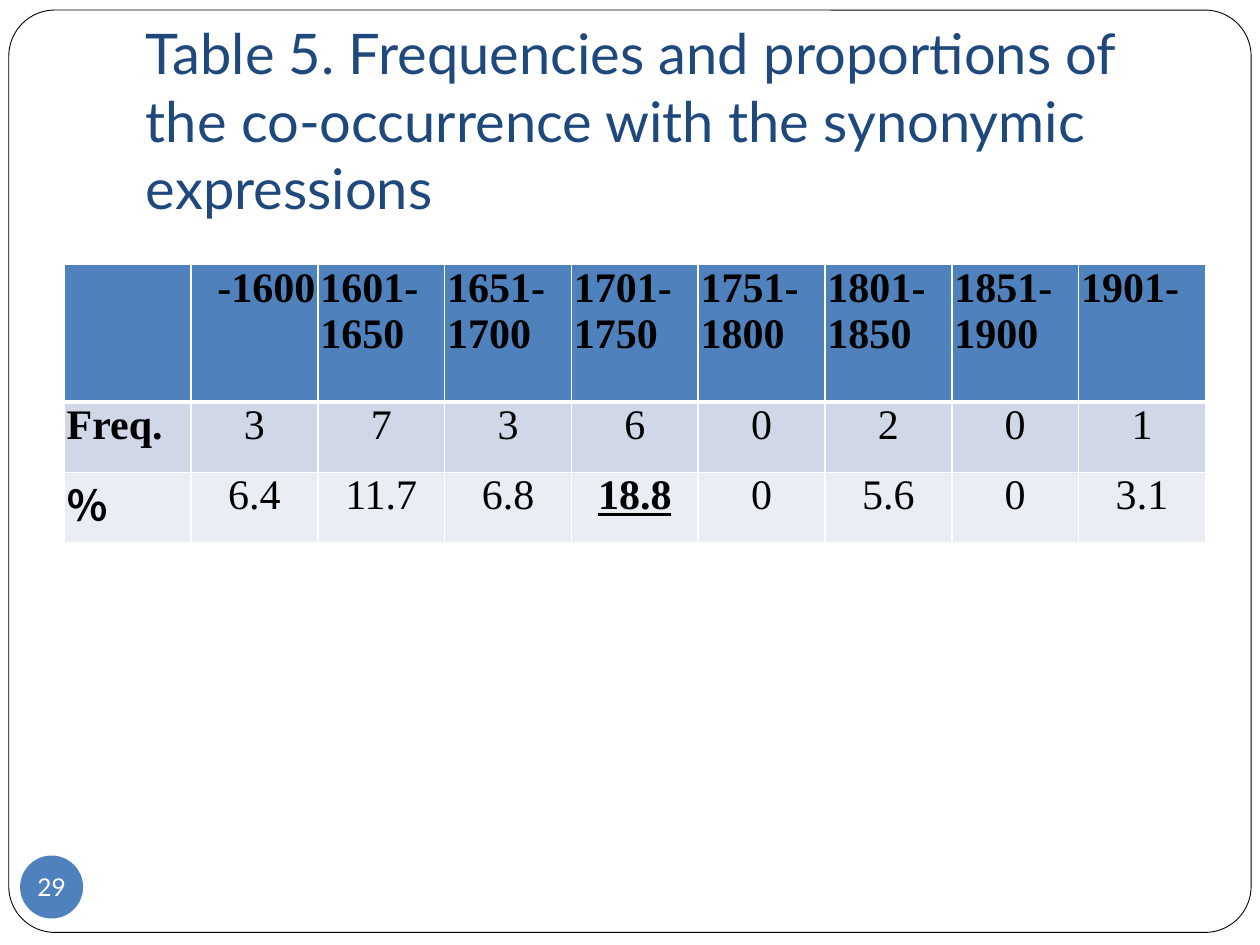
from dataclasses import dataclass

from lxml.etree import SubElement
from pptx import Presentation
from pptx.dml.color import RGBColor
from pptx.enum.shapes import MSO_SHAPE
from pptx.enum.text import MSO_ANCHOR, PP_ALIGN
from pptx.oxml.ns import qn
from pptx.util import Inches, Pt


@dataclass(frozen=True)
class Theme:
    white: str = "FFFFFF"
    black: str = "000000"
    navy: str = "1F497D"
    blue: str = "4F81BD"
    row_fills: tuple = ("4F81BD", "D0D8E8", "E9EDF4")
    main_font: str = "Lato"
    table_font: str = "Times New Roman"
    percent_font: str = "Cambria"
    title_size: int = 32
    table_size: int = 24
    number_size: int = 14


THEME = Theme()
ROWS = [
    ["", "-1600", "1601-1650", "1651-1700", "1701-1750", "1751-1800",
     "1801-1850", "1851-1900", "1901-"],
    ["Freq.", "3", "7", "3", "6", "0", "2", "0", "1"],
    ["％", "6.4", "11.7", "6.8", "18.8", "0", "5.6", "0", "3.1"],
]
ROW_HEIGHTS = [1.09, 0.56, 0.56]
HIGHLIGHT = "18.8"


def inches(box):
    return [Inches(length) for length in box]


def set_font(paragraph, name, size, color, bold=False):
    font = paragraph.font
    font.name = name
    font.size = Pt(size)
    font.bold = bold
    font.color.rgb = RGBColor.from_string(color)


def set_margins(target, left, top, right, bottom):
    target.margin_left, target.margin_top = Inches(left), Inches(top)
    target.margin_right, target.margin_bottom = Inches(right), Inches(bottom)


def add_filled_shape(slide, kind, box, color):
    shape = slide.shapes.add_shape(kind, *inches(box))
    shape.shadow.inherit = False
    shape.fill.solid()
    shape.fill.fore_color.rgb = RGBColor.from_string(color)
    return shape


def add_frame(slide, box):
    frame = add_filled_shape(slide, MSO_SHAPE.ROUNDED_RECTANGLE, box, THEME.white)
    frame.adjustments[0] = 0.05
    frame.line.color.rgb = RGBColor.from_string(THEME.black)
    frame.line.width = Pt(0.5)


def add_title(slide, box, text):
    text_frame = slide.shapes.add_textbox(*inches(box)).text_frame
    text_frame.word_wrap = True
    text_frame.vertical_anchor = MSO_ANCHOR.BOTTOM
    set_margins(text_frame, 0.1, 0.05, 0.1, 0.1)
    text_frame.text = text
    set_font(text_frame.paragraphs[0], THEME.main_font, THEME.title_size, THEME.navy)


def add_slide_number(slide, box, number):
    badge = add_filled_shape(slide, MSO_SHAPE.OVAL, box, THEME.blue)
    badge.line.fill.background()
    text_frame = badge.text_frame
    text_frame.word_wrap = False
    text_frame.vertical_anchor = MSO_ANCHOR.MIDDLE
    set_margins(text_frame, 0, 0, 0, 0)
    text_frame.text = number
    paragraph = text_frame.paragraphs[0]
    paragraph.alignment = PP_ALIGN.CENTER
    set_font(paragraph, THEME.main_font, THEME.number_size, THEME.white)


def set_borders(cell, top, bottom):
    """Draw white cell borders, 1 point at the sides and as given above and below."""
    properties = cell._tc.get_or_add_tcPr()
    for side, width in (("L", 1), ("R", 1), ("T", top), ("B", bottom)):
        line = SubElement(properties, qn(f"a:ln{side}"), w=str(Pt(width)))
        fill = SubElement(line, qn("a:solidFill"))
        SubElement(fill, qn("a:srgbClr"), val=THEME.white)


def fill_cell(cell, text, row, column):
    set_borders(cell, top=3 if row == 1 else 1, bottom=3 if row == 0 else 1)
    cell.fill.solid()
    cell.fill.fore_color.rgb = RGBColor.from_string(THEME.row_fills[row])
    set_margins(cell, 0.02, 0, 0.02, 0)
    cell.text = text
    paragraph = cell.text_frame.paragraphs[0]
    is_label = row == 0 or column == 0
    font_name = THEME.percent_font if text == "％" else THEME.table_font
    set_font(paragraph, font_name, THEME.table_size, THEME.black,
             bold=is_label or text == HIGHLIGHT)
    if text == HIGHLIGHT:
        paragraph.font.underline = True
    if not is_label:
        paragraph.alignment = PP_ALIGN.CENTER
    elif (row, column) == (0, 1):
        paragraph.alignment = PP_ALIGN.RIGHT


def add_frequency_table(slide, box):
    table = slide.shapes.add_table(len(ROWS), len(ROWS[0]), *inches(box)).table
    for row, height in zip(table.rows, ROW_HEIGHTS):
        row.height = Inches(height)
    for row, texts in enumerate(ROWS):
        for column, text in enumerate(texts):
            fill_cell(table.cell(row, column), text, row, column)


def main():
    presentation = Presentation()
    presentation.slide_width, presentation.slide_height = Inches(10), Inches(7.5)
    slide = presentation.slides.add_slide(presentation.slide_layouts[6])
    add_frame(slide, (0.07, 0.08, 9.86, 7.32))
    add_title(slide, (1.06, 0.6, 8.5, 1.25),
              "Table 5. Frequencies and proportions of the co-occurrence "
              "with the synonymic expressions")
    add_slide_number(slide, (0.16, 6.79, 0.5, 0.5), "29")
    add_frequency_table(slide, (0.51, 2.1, 9.06, 2.2))
    presentation.save("out.pptx")


if __name__ == "__main__":
    main()
